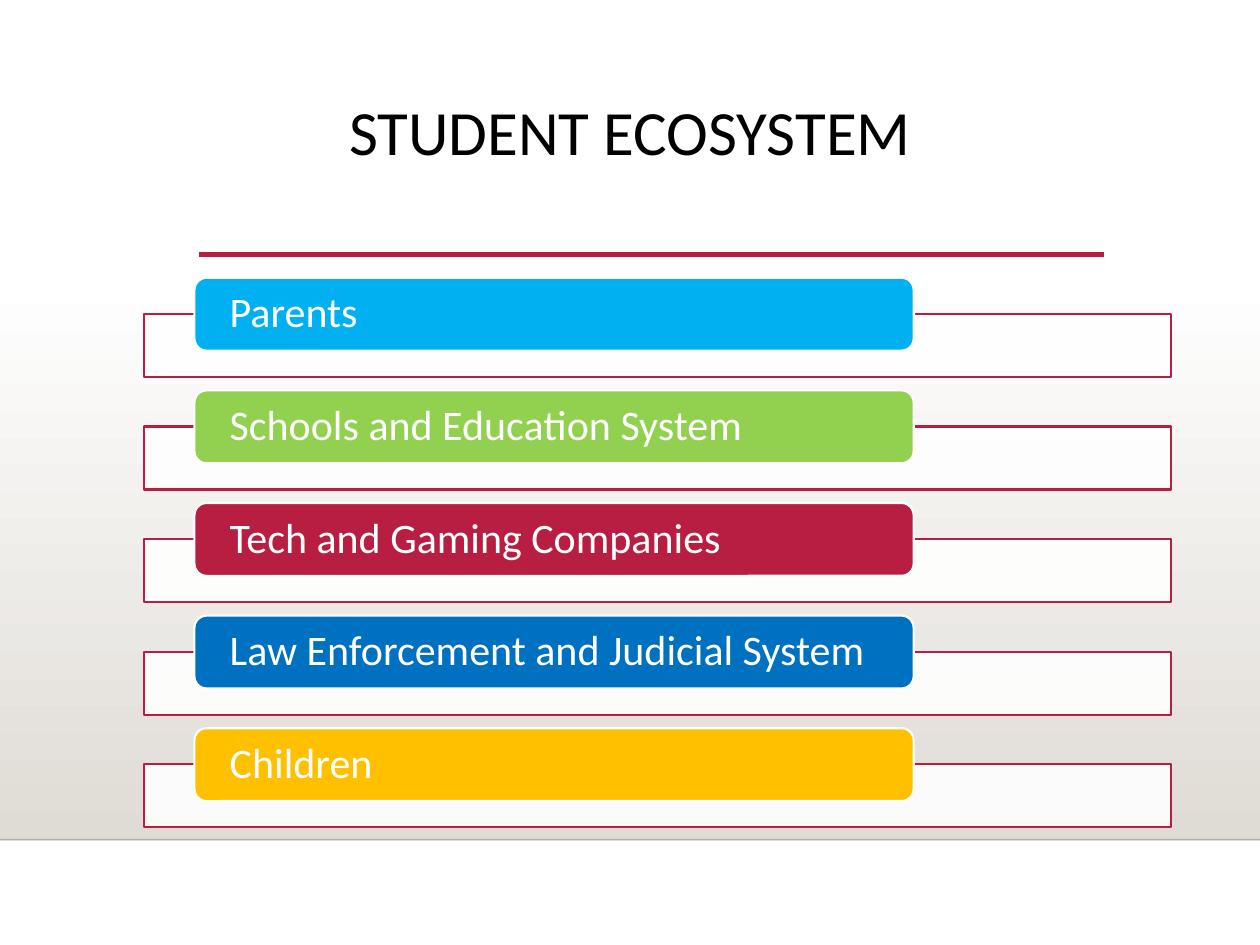
import pptx
import pptx.dml.color
import pptx.enum.shapes
import pptx.enum.text
import pptx.oxml
import pptx.oxml.ns
import pptx.util

Cm = pptx.util.Cm
Pt = pptx.util.Pt
SHAPES = pptx.enum.shapes.MSO_SHAPE
ALIGN = pptx.enum.text.PP_ALIGN
ANCHOR = pptx.enum.text.MSO_ANCHOR

COLOURS = {
    "white": "FFFFFF",
    "black": "000000",
    "stone": "DFDBD5",
    "crimson": "B71E42",
    "sky": "00B0F0",
    "green": "92D050",
    "blue": "0070C0",
    "amber": "FFC000",
}

GROUPS = [
    ("Parents", "sky"),
    ("Schools and Education System", "green"),
    ("Tech and Gaming Companies", "crimson"),
    ("Law Enforcement and Judicial System", "blue"),
    ("Children", "amber"),
]
ROW_TOP = 5.6
ROW_PITCH = 2.27
BAR_DROP = 0.73


def colour(name):
    return pptx.dml.color.RGBColor.from_string(COLOURS[name])


def set_opacity(fill_parent, percent):
    """Make the first solid colour below the given XML element partly transparent."""
    tag = pptx.oxml.ns.qn("a:srgbClr")
    alpha = pptx.oxml.parse_xml(
        f'<a:alpha {pptx.oxml.ns.nsdecls("a")} val="{percent * 1000}"/>')
    next(fill_parent.iter(tag)).append(alpha)


class SlidePainter:
    def __init__(self, slide, font="Calibri"):
        self.slide = slide
        self.font = font

    def shape(self, kind, left, top, width, height, fill=None, line=None):
        shape = self.slide.shapes.add_shape(
            kind, Cm(left), Cm(top), Cm(width), Cm(height))
        shape.shadow.inherit = False
        if fill:
            shape.fill.solid()
            shape.fill.fore_color.rgb = colour(fill)
        if line:
            shape.line.color.rgb = colour(line)
            shape.line.width = Pt(1.25)
        else:
            shape.line.fill.background()
        return shape

    def gradient_panel(self, left, top, width, height, first, last):
        panel = self.shape(SHAPES.RECTANGLE, left, top, width, height)
        panel.fill.gradient()
        panel.fill.gradient_angle = 270
        for stop, name in zip(panel.fill.gradient_stops, (first, last)):
            stop.color.rgb = colour(name)

    def bar(self, left, top, width, height):
        bar = self.shape(SHAPES.RECTANGLE, left, top, width, height,
                         "white", "crimson")
        set_opacity(bar._element.spPr, 90)

    def tag(self, words, fill, left, top, width, height):
        tag = self.shape(SHAPES.ROUNDED_RECTANGLE, left, top, width, height,
                         fill, "white")
        self.add_words(tag.text_frame, words, 24, "white", ALIGN.LEFT,
                       ANCHOR.MIDDLE, (0.64, 0))

    def rule(self, left, right, top, name, width, opacity=100):
        rule = self.slide.shapes.add_connector(
            pptx.enum.shapes.MSO_CONNECTOR.STRAIGHT,
            Cm(left), Cm(top), Cm(right), Cm(top))
        rule.line.color.rgb = colour(name)
        rule.line.width = Pt(width)
        properties = rule._element.spPr
        if opacity < 100:
            set_opacity(properties, opacity)
        properties.append(pptx.oxml.parse_xml(
            f'<a:effectLst {pptx.oxml.ns.nsdecls("a")}/>'))

    def title(self, words, left, top, width, height):
        box = self.slide.shapes.add_textbox(
            Cm(left), Cm(top), Cm(width), Cm(height))
        self.add_words(box.text_frame, words, 36, "black", ALIGN.CENTER,
                       ANCHOR.TOP, (0.25, 0.13))

    def add_words(self, frame, words, size, name, align, anchor, insets):
        frame.word_wrap = True
        frame.vertical_anchor = anchor
        frame.margin_left = frame.margin_right = Cm(insets[0])
        frame.margin_top = frame.margin_bottom = Cm(insets[1])
        para = frame.paragraphs[0]
        para.alignment = align
        para.line_spacing = 0.9
        span = para.add_run()
        span.text = words
        span.font.name = self.font
        span.font.size = Pt(size)
        span.font.color.rgb = colour(name)


def main():
    deck = pptx.Presentation()
    deck.slide_width = Cm(25.4)
    deck.slide_height = Cm(19.05)
    painter = SlidePainter(deck.slides.add_slide(deck.slide_layouts[6]))

    painter.gradient_panel(0, 5.59, 25.4, 11.34, "white", "stone")
    painter.rule(0, 25.4, 16.93, "black", 1, opacity=20)
    painter.rule(4.01, 22.26, 5.13, "crimson", 2.5)
    painter.title("STUDENT ECOSYSTEM", 1.07, 1.9, 23.26, 2.92)

    for row, (group, fill) in enumerate(GROUPS):
        top = ROW_TOP + row * ROW_PITCH
        painter.bar(2.9, top + BAR_DROP, 20.7, 1.27)
        painter.tag(group, fill, 3.92, top, 14.5, 1.47)

    deck.save("out.pptx")


if __name__ == "__main__":
    main()
